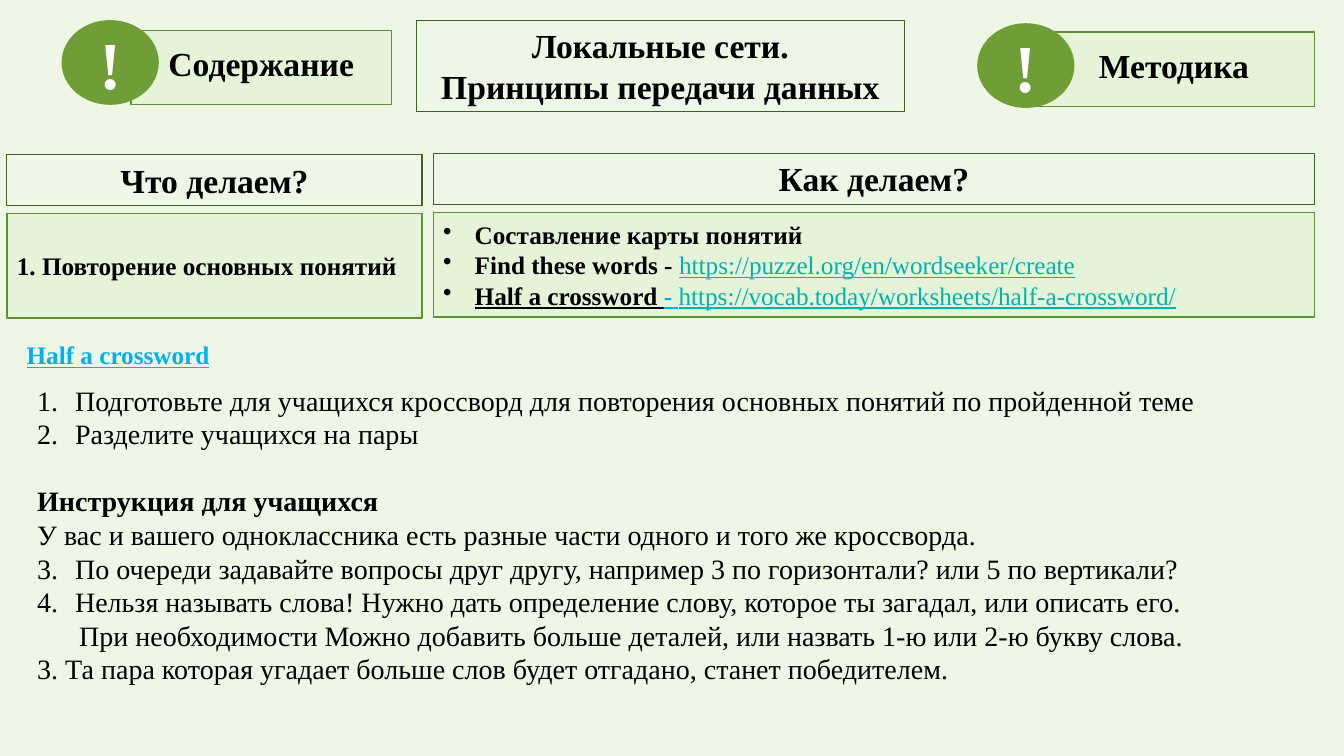
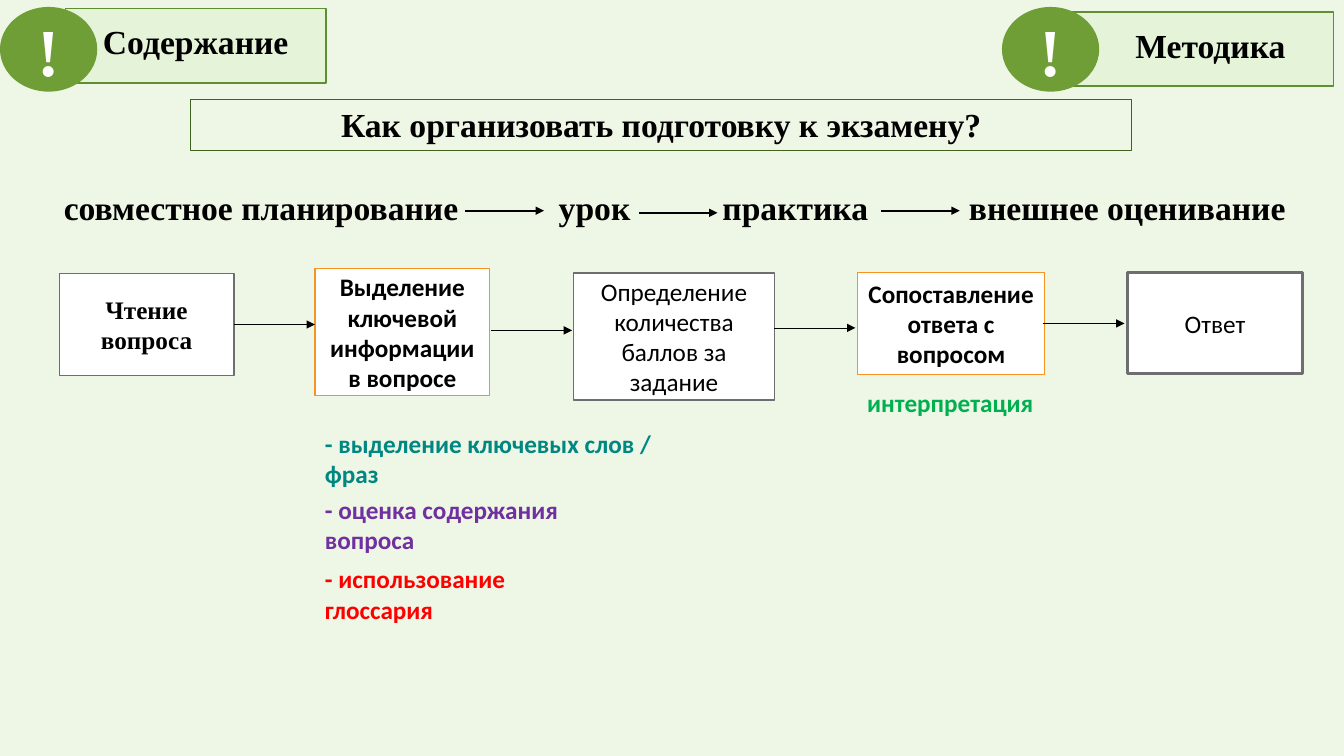
import pptx
import pptx.util
import pptx.dml.color
import pptx.enum.shapes
import pptx.enum.text
import pptx.oxml.ns
from dataclasses import dataclass
from lxml import etree

Pt = pptx.util.Pt
Align = pptx.enum.text.PP_ALIGN
Anchor = pptx.enum.text.MSO_ANCHOR
Shape = pptx.enum.shapes.MSO_SHAPE
qn = pptx.oxml.ns.qn


@dataclass(frozen=True)
class Theme:
    back: str = "EEF6E5"
    pale: str = "E5F3D9"
    edge: str = "5E8F32"
    dark: str = "3F6220"
    leaf: str = "6F9E36"
    ink: str = "000000"
    white: str = "FFFFFF"
    grey: str = "6D6E70"
    orange: str = "F79322"
    link: str = "00B4AC"
    sky: str = "00B0F0"
    green: str = "00B050"
    teal: str = "008781"
    violet: str = "7030A0"
    red: str = "FF0000"
    serif: str = "Times New Roman"
    sans: str = "Calibri"
    mark: int = 48
    head: int = 24
    body: int = 20
    small: int = 18


T = Theme()


def rgb(code):
    return pptx.dml.color.RGBColor.from_string(code)


@dataclass
class Para:
    """A paragraph: its runs are (text, style changes) pairs."""
    runs: list
    bullet: str = ""
    start: int = 0
    left: float = 0
    hang: float = 0
    before: float = 0


class Deck:
    def __init__(self):
        self.prs = pptx.Presentation()
        self.prs.slide_width, self.prs.slide_height = Pt(960), Pt(540)
        fill = self.prs.slide_master.background.fill
        fill.solid()
        fill.fore_color.rgb = rgb(T.back)
        self.slide = None

    def page(self, layout):
        self.slide = self.prs.slides.add_slide(self.prs.slide_layouts[layout])

    def put(self, shape, paras, align=Align.LEFT, anchor=Anchor.TOP, **style):
        """Fill a shape with paragraphs, each a string or a Para."""
        frame = shape.text_frame
        frame.word_wrap = True
        frame.auto_size = pptx.enum.text.MSO_AUTO_SIZE.NONE
        frame.vertical_anchor = anchor
        for i, item in enumerate(paras):
            if isinstance(item, str):
                item = Para([(item, {})])
            par = frame.paragraphs[0] if i == 0 else frame.add_paragraph()
            self.indent(par, item)
            par.alignment = align
            par.space_before = Pt(item.before)
            for text, change in item.runs:
                self.run(par, text, **{**style, **change})

    def indent(self, par, item):
        props = par._p.get_or_add_pPr()
        props.set("marL", str(Pt(item.left)))
        props.set("indent", str(-Pt(item.hang)))
        if item.start:
            etree.SubElement(props, qn("a:buAutoNum"), type="arabicPeriod",
                             startAt=str(item.start))
        elif item.bullet:
            etree.SubElement(props, qn("a:buChar"), char=item.bullet)
        else:
            etree.SubElement(props, qn("a:buNone"))

    def run(self, par, text, size=T.small, color=T.ink, face=T.serif,
            bold=True, under=False):
        run = par.add_run()
        run.text = text
        font = run.font
        font.size, font.name, font.bold = Pt(size), face, bold
        font.underline = under
        font.color.rgb = rgb(color)

    def place(self, shape, box):
        shape.left, shape.top, shape.width, shape.height = map(Pt, box)

    def title(self, box, lines):
        shape = self.slide.shapes.title
        self.place(shape, box)
        shape.line.color.rgb = rgb(T.dark)
        shape.line.width = Pt(0.75)
        self.put(shape, lines, Align.CENTER, size=T.head)

    def body(self, box, paras):
        shape = self.slide.placeholders[1]
        self.place(shape, box)
        self.put(shape, paras, size=T.body, bold=False)

    def shape(self, box, fill=None, line=None, width=1, kind=Shape.RECTANGLE):
        shape = self.slide.shapes.add_shape(kind, *map(Pt, box))
        shape.shadow.inherit = False
        if fill:
            shape.fill.solid()
            shape.fill.fore_color.rgb = rgb(fill)
        else:
            shape.fill.background()
        if line:
            shape.line.color.rgb = rgb(line)
            shape.line.width = Pt(width)
        else:
            shape.line.fill.background()
        return shape

    def head(self, box, text):
        self.put(self.shape(box, line=T.dark, width=0.75), [text],
                 Align.CENTER, size=T.head)

    def panel(self, box, paras):
        self.put(self.shape(box, T.pale, T.edge), paras, anchor=Anchor.MIDDLE)

    def badge(self, word, plate, oval, lead=0):
        """A plate with a word, and an oval with an exclamation mark over it."""
        shape = self.shape((*plate, 53), T.pale, T.edge)
        shape.text_frame.margin_top = Pt(9)
        shape.text_frame.margin_left = Pt(7.2 + lead)
        self.put(shape, [word], Align.CENTER, size=T.head)
        mark = self.shape((*oval, 69.5, 60.5), T.leaf, kind=Shape.OVAL)
        self.put(mark, ["!"], Align.CENTER, Anchor.MIDDLE,
                 size=T.mark, color=T.white)

    def step(self, box, text, line, width=1, **style):
        self.put(self.shape(box, T.white, line, width), [text],
                 Align.CENTER, Anchor.MIDDLE, **style)

    def label(self, box, text, align=Align.LEFT, **style):
        shape = self.slide.shapes.add_textbox(*map(Pt, box))
        self.put(shape, [text], align, **style)

    def arrow(self, x, y, span, width):
        kind = pptx.enum.shapes.MSO_CONNECTOR.STRAIGHT
        line = self.slide.shapes.add_connector(
            kind, Pt(x), Pt(y), Pt(x + span), Pt(y))
        line.line.color.rgb = rgb(T.ink)
        line.line.width = Pt(width)
        props = line._element.spPr
        etree.SubElement(props.find(qn("a:ln")), qn("a:tailEnd"),
                         type="triangle")
        etree.SubElement(props, qn("a:effectLst"))


def lesson(deck):
    deck.page(1)
    deck.badge("Содержание", (93.6, 21.6, 186), (44, 14.4))
    deck.badge("Методика", (736, 23, 203), (698, 16.6), 2)
    deck.title((297.5, 14.4, 348.5, 65.5),
               ["Локальные сети.", "Принципы передачи данных"])
    deck.head((5, 110.5, 296.5, 36.4), "Что делаем?")
    deck.head((309.5, 109.5, 629.5, 36.4), "Как делаем?")
    deck.panel((5, 152.6, 296.5, 74.5), ["1. Повторение основных понятий"])
    link = dict(color=T.link, bold=False, under=True)
    tools = [
        [("Cоставление карты понятий", {})],
        [("Find these words - ", {}),
         ("https://puzzel.org/en/wordseeker/create", link)],
        [("Half a crossword ", dict(under=True)),
         ("- ", dict(color=T.sky, under=True)),
         ("https://vocab.today/worksheets/half-a-crossword/", link)],
    ]
    deck.panel((309.5, 152, 629.5, 74.5),
               [Para(runs, "•", left=22.5, hang=22.5) for runs in tools])
    deck.label((12, 239, 150, 29), "Нalf a crossword", color=T.sky, under=True)

    def item(start, text):
        return Para([(text, {})], start=start, left=27, hang=27)

    deck.body((19.4, 270, 904, 225.5), [
        item(1, "Подготовьте для учащихся кроссворд для повторения основных понятий по пройденной теме"),
        item(2, "Разделите учащихся на пары"),
        Para([("Инструкция для учащихся", dict(bold=True))], before=24),
        "У вас и вашего одноклассника есть разные части одного и того же кроссворда.",
        item(3, "По очереди задавайте вопросы друг другу, например 3 по горизонтали? или 5 по вертикали?"),
        item(4, "Нельзя называть слова! Нужно дать определение слову, которое ты загадал, или описать его."),
        Para([("При необходимости Можно добавить больше деталей, или назвать 1-ю или 2-ю букву слова.", {})], left=30),
        "3. Та пара которая угадает больше слов будет отгадано, станет победителем.",
    ])


def exam(deck):
    deck.page(5)
    deck.badge("Содержание", (46.8, 6.2, 186), (0, 5))
    deck.badge("Методика", (764.6, 8.6, 188), (715.7, 5), 12)
    deck.title((136, 70.8, 672.5, 36.4),
               ["Как организовать подготовку к экзамену?"])

    stages = [("совместное планирование", 38.5, 300), ("урок", 392, 70),
              ("практика", 509, 122), ("внешнее оценивание", 685, 245)]
    for word, x, wide in stages:
        deck.label((x, 130.3, wide, 36.4), word, size=T.head)
    for x, y in [(332.5, 150.5), (456.5, 152), (629.5, 150.5)]:
        deck.arrow(x, y, 56, 1.5)

    sans = dict(face=T.sans)
    plain = dict(face=T.sans, bold=False)
    steps = [
        ("Чтение вопроса", (42.3, 195.5, 124.8, 72.7), T.grey, 1, {}),
        ("Выделение ключевой информации в вопросе",
         (225, 192, 124.8, 90.7), T.orange, 1, sans),
        ("Определение количества баллов за задание",
         (409.8, 195, 143.3, 90.7), T.grey, 1, plain),
        ("Сопоставление ответа с вопросом",
         (612.5, 194.8, 133.7, 72.7), T.orange, 1, sans),
        ("Ответ", (805.5, 194.4, 124.8, 72.7), T.grey, 2.25, plain),
    ]
    for text, box, line, width, style in steps:
        deck.step(box, text, line, width, **style)
    for x, y in [(167, 231.8), (350.6, 236), (553, 234.2), (745.2, 231)]:
        deck.arrow(x, y, 58, 0.5)

    deck.label((577.5, 273, 202.5, 29), "интерпретация", Align.CENTER,
               color=T.green, **sans)
    notes = [("- выделение ключевых слов / фраз", 302.4, 288, T.teal),
             ("- оценка содержания вопроса", 349.5, 245.5, T.violet),
             ("- использование глоссария", 399, 214.5, T.red)]
    for text, y, wide, color in notes:
        deck.label((225, y, wide, 51), text, color=color, **sans)


def main():
    deck = Deck()
    lesson(deck)
    exam(deck)
    deck.prs.save("out.pptx")


if __name__ == "__main__":
    main()
